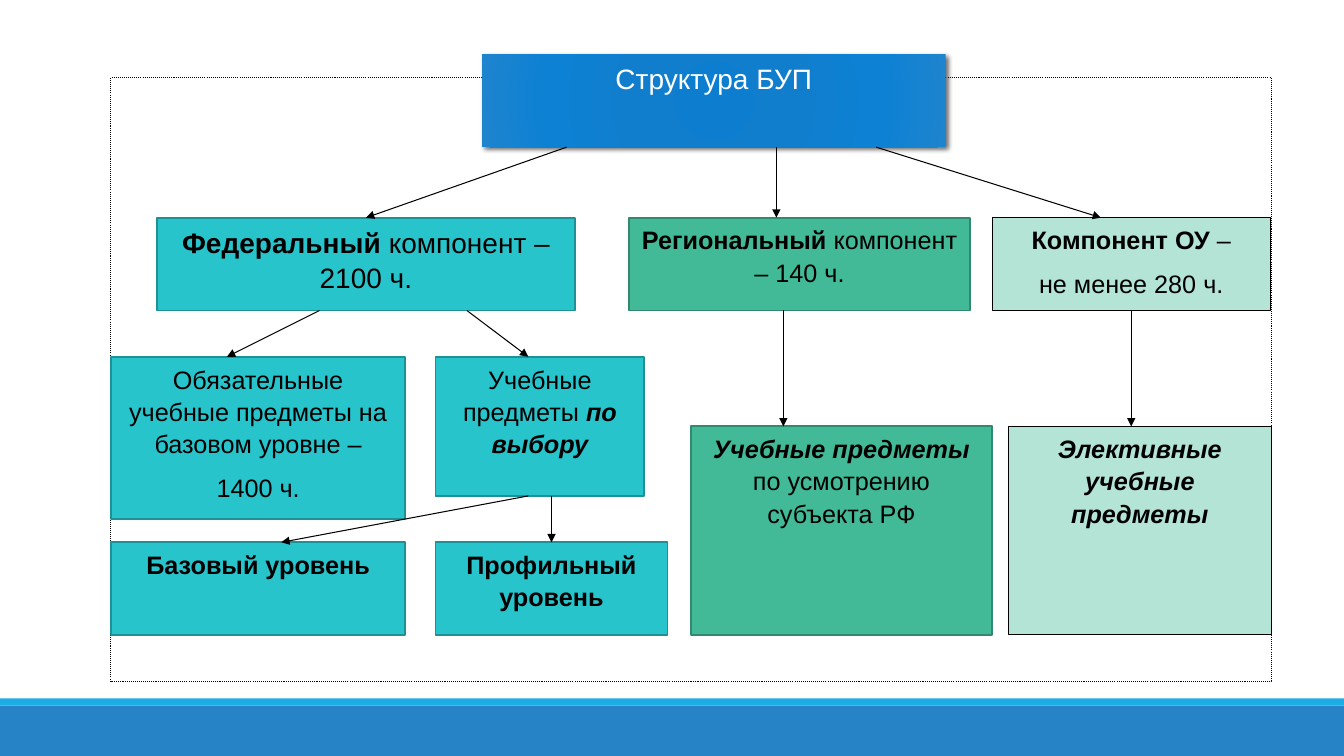
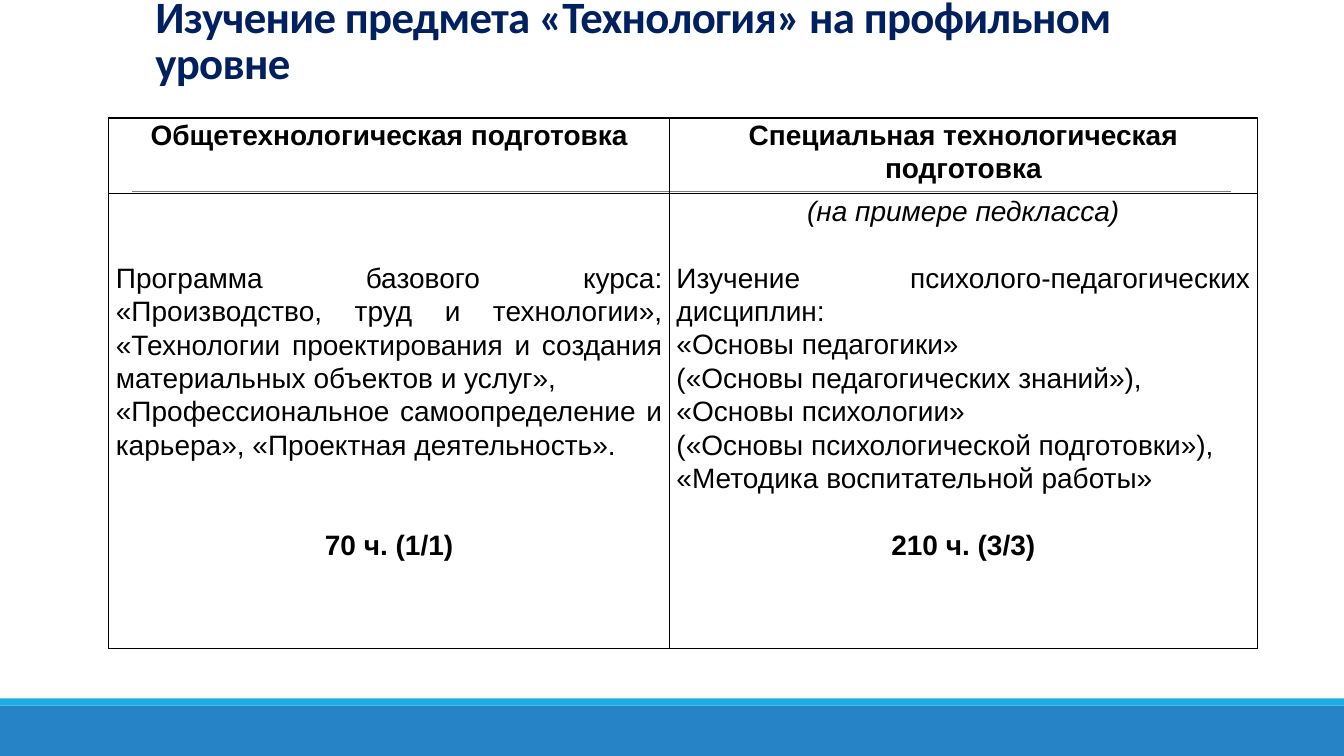
from dataclasses import dataclass

from pptx import Presentation
from pptx.dml.color import RGBColor
from pptx.enum.dml import MSO_LINE
from pptx.enum.shapes import MSO_CONNECTOR, MSO_SHAPE
from pptx.enum.text import MSO_ANCHOR, MSO_AUTO_SIZE, PP_ALIGN
from pptx.oxml import parse_xml
from pptx.oxml.ns import nsdecls
from pptx.util import Inches, Pt


@dataclass(frozen=True)
class Theme:
    black: str = "000000"
    white: str = "FFFFFF"
    navy: str = "002060"
    grey: str = "808080"
    band: str = "2683C6"
    band_edge: str = "1CADE4"
    body_font: str = "Arial"
    title_font: str = "Calibri"
    title_size: int = 32
    large_size: int = 20
    small_size: int = 18
    line_spacing: float = 1.07
    hairline: float = 0.75


THEME = Theme()
rgb = RGBColor.from_string
CENTER, JUSTIFY = PP_ALIGN.CENTER, PP_ALIGN.JUSTIFY


def add_box(shapes, bounds, fill, line=None, width=THEME.hairline):
    box = shapes.add_shape(MSO_SHAPE.RECTANGLE, *map(Inches, bounds))
    box.shadow.inherit = False
    box.fill.solid()
    box.fill.fore_color.rgb = rgb(fill)
    if line:
        box.line.color.rgb = rgb(line)
        box.line.width = Pt(width)
    else:
        box.line.fill.background()
    return box


def write(frame, paragraphs, size, color=THEME.black, font=THEME.body_font,
          spacing=THEME.line_spacing, after=0):
    """Fill a frame from (alignment, space before, runs); a run is (text, style of b and i)."""
    frame.word_wrap = True
    for index, (align, before, runs) in enumerate(paragraphs):
        para = frame.paragraphs[0] if index == 0 else frame.add_paragraph()
        para.alignment = align
        para.line_spacing = spacing
        para.space_before, para.space_after = Pt(before), Pt(after)
        for text, style in runs:
            span = para.add_run()
            span.text = text
            span.font.name, span.font.size = font, Pt(size)
            span.font.color.rgb = rgb(color)
            span.font.bold, span.font.italic = "b" in style, "i" in style


deck = Presentation()
deck.slide_width, deck.slide_height = Inches(13.33), Inches(7.5)
title_only = deck.slide_layouts[5]
structure, subject = (deck.slides.add_slide(title_only) for _ in range(2))

# Bands shared by all slides live on the slide master
master_tree = deck.slide_master.shapes.element
for top, height, color in ((6.93, 0.07, THEME.band_edge), (7, 0.5, THEME.band)):
    band = add_box(structure.shapes, (0, top, 13.33, height), color)
    master_tree.insert(2, band.element)

# Both titles
title_styles = (
    (structure, (4.78, 0.54, 4.6, 0.92), MSO_ANCHOR.TOP, PP_ALIGN.CENTER, "Структура БУП", "",
     dict(size=THEME.large_size, color=THEME.white, after=8)),
    (subject, (1.44, 0.3, 11, 0.63), MSO_ANCHOR.BOTTOM, PP_ALIGN.LEFT,
     "Изучение предмета «Технология» на профильном уровне", "b",
     dict(size=THEME.title_size, color=THEME.navy, font=THEME.title_font, spacing=0.85)),
)
for slide, bounds, anchor, align, text, style, look in title_styles:
    title = slide.shapes.title
    title.left, title.top, title.width, title.height = map(Inches, bounds)
    title.text_frame.auto_size = MSO_AUTO_SIZE.NONE
    title.text_frame.vertical_anchor = anchor
    write(title.text_frame, [(align, 0, [(text, style)])], **look)
for span in subject.shapes.title.text_frame.paragraphs[0].runs:
    span.font._element.set("spc", "-50")

# Slide 1: structure diagram
frame = add_box(structure.shapes, (1.1, 0.77, 11.51, 5.99), THEME.white, THEME.black)
frame.line.dash_style = MSO_LINE.ROUND_DOT

heading = structure.shapes.title
structure.shapes.element.append(heading.element)
stops = "".join(
    f'<a:gs pos="{position}000"><a:srgbClr val="{color}"/></a:gs>'
    for position, color in ((0, "0D7ECF"), (34, "117ECD"), (70, "0D81D4"), (100, "1E84CE")))
heading.element.spPr.append(parse_xml(
    f'<a:gradFill {nsdecls("a")} rotWithShape="1"><a:gsLst>{stops}</a:gsLst><a:path path="circle">'
    '<a:fillToRect l="100000" t="100000" r="100000" b="100000"/></a:path></a:gradFill>'))
heading.element.spPr.append(parse_xml(
    f'<a:effectLst {nsdecls("a")}><a:outerShdw blurRad="{Pt(3.5)}" dist="{Pt(2)}" dir="2700000">'
    f'<a:srgbClr val="{THEME.black}"><a:alpha val="60000"/></a:srgbClr></a:outerShdw></a:effectLst>'))

teal = ("28C4CC", "1E9197", 1.25)
green = ("42BA97", "318A70", 1.25)
mint = ("B3E4D6", THEME.black, THEME.hairline)
components, choices, subjects, levels = 2.16, 3.54, 4.23, 5.38
box_height = 0.92
small, large = THEME.small_size, THEME.large_size

box_data = {
    "federal": ((1.56, components, 4.14, box_height), teal, large,
                [[("Федеральный ", "b"), ("компонент – 2100 ч.", "")]]),
    "required": ((1.1, choices, 2.92, 1.61), teal, small,
                 [[("Обязательные учебные предметы на базовом уровне –", "")],
                  [("1400 ч.", "")]]),
    "regional": ((6.24, components, 3.38, box_height), green, small,
                 [[("Региональный ", "b"), ("компонент – 140 ч.", "")]]),
    "school": ((9.84, components, 2.76, box_height), mint, small,
               [[("Компонент ОУ", "b"), (" –", "")], [("не менее 280 ч.", "")]]),
    "optional": ((4.32, choices, 2.07, 1.38), teal, small,
                 [[("Учебные предметы ", ""), ("по выбору", "bi")]]),
    "region subjects": ((6.85, subjects, 2.99, 2.07), green, small,
                        [[("Учебные предметы", "bi"), (" по усмотрению субъекта РФ", "")]]),
    "electives": ((10, subjects, 2.61, 2.07), mint, small,
                  [[("Элективные учебные предметы", "bi")]]),
    "profile level": ((4.32, levels, 2.3, box_height), teal, small,
                      [[("Профильный уровень", "b")]]),
    "basic level": ((1.1, levels, 2.92, box_height), teal, small,
                    [[("Базовый уровень", "b")]]),
}
boxes = {"heading": heading}
for name, (bounds, colors, size, lines) in box_data.items():
    box = boxes[name] = add_box(structure.shapes, bounds, *colors)
    box.text_frame.vertical_anchor = MSO_ANCHOR.TOP
    write(box.text_frame, [(CENTER, 0, runs) for runs in lines], size, after=8)

# Arrows run from the bottom of one box to the top of another
arrows = (
    ("heading", 5.62, "federal", 3.63),
    ("federal", 3.17, "required", 2.25),
    ("federal", 4.63, "optional", 5.24),
    ("optional", 5.24, "basic level", 2.79),
    ("optional", 5.47, "profile level", 5.47),
    ("heading", 7.7, "regional", 7.7),
    ("heading", 8.69, "school", 10.92),
    ("regional", 7.77, "region subjects", 7.77),
    ("school", 11.22, "electives", 11.22),
)
for source, start_x, target, end_x in arrows:
    upper, lower = boxes[source], boxes[target]
    arrow = structure.shapes.add_connector(
        MSO_CONNECTOR.STRAIGHT, Inches(start_x), upper.top + upper.height,
        Inches(end_x), lower.top)
    for box, x, join, side in ((upper, start_x, arrow.begin_connect, 2),
                               (lower, end_x, arrow.end_connect, 0)):
        if abs(box.left + box.width / 2 - Inches(x)) < Inches(0.02):
            join(box, side)
    arrow.line.color.rgb = rgb(THEME.black)
    arrow.line.width = Pt(THEME.hairline)
    outline = arrow.element.spPr.get_or_add_ln()
    outline.append(parse_xml(f'<a:tailEnd {nsdecls("a")} type="triangle"/>'))
    arrow.element.spPr.append(parse_xml(f'<a:effectLst {nsdecls("a")}/>'))

# Slide 2: rule and table
rule = subject.shapes.add_connector(
    MSO_CONNECTOR.STRAIGHT, Inches(1.31), Inches(1.9), Inches(12.21), Inches(1.9))
rule.line.color.rgb = rgb(THEME.grey)
rule.line.width = Pt(0.5)
rule.element.spPr.append(parse_xml(f'<a:effectLst {nsdecls("a")}/>'))

table = subject.shapes.add_table(
    2, 2, Inches(1.08), Inches(1.17), Inches(11.39), Inches(5.26)).table
table.first_row = table.horz_banding = False
for column, width in zip(table.columns, (5.56, 5.83)):
    column.width = Inches(width)
for row, height in zip(table.rows, (0.75, 4.51)):
    row.height = Inches(height)

line_gap = 24
cell_data = (
    [(CENTER, 0, "Общетехнологическая подготовка", "b")],
    [(CENTER, 0, "Специальная технологическая подготовка", "b")],
    [(JUSTIFY, 0, "Программа базового курса: «Производство, труд и технологии», "
      "«Технологии проектирования и создания материальных объектов и услуг»,", ""),
     (JUSTIFY, 0, "«Профессиональное самоопределение и карьера», «Проектная деятельность».", ""),
     (CENTER, 2 * line_gap, "70 ч. (1/1)", "b")],
    [(CENTER, 0, "(на примере педкласса)", "i"),
     (JUSTIFY, line_gap, "Изучение психолого-педагогических дисциплин:", ""),
     (JUSTIFY, 0, "«Основы педагогики»", ""),
     (JUSTIFY, 0, "(«Основы педагогических знаний»),", ""),
     (JUSTIFY, 0, "«Основы психологии»", ""),
     (JUSTIFY, 0, "(«Основы психологической подготовки»),", ""),
     (JUSTIFY, 0, "«Методика воспитательной работы»", ""),
     (CENTER, line_gap, "210 ч. (3/3)", "b")],
)
for cell, lines in zip(table.iter_cells(), cell_data):
    cell.margin_left = cell.margin_right = Inches(0.07)
    cell.margin_top = cell.margin_bottom = 0
    properties = cell._tc.get_or_add_tcPr()
    for side in ("lnL", "lnR", "lnT", "lnB"):
        properties.append(parse_xml(
            f'<a:{side} {nsdecls("a")} w="{Pt(1)}"><a:solidFill>'
            f'<a:srgbClr val="{THEME.black}"/></a:solidFill></a:{side}>'))
    cell.fill.background()
    write(cell.text_frame, [(align, before, [(text, style)]) for align, before, text, style in lines],
          THEME.large_size)
table.cell(1, 0).margin_top = Pt(2 * line_gap)

deck.save("out.pptx")
